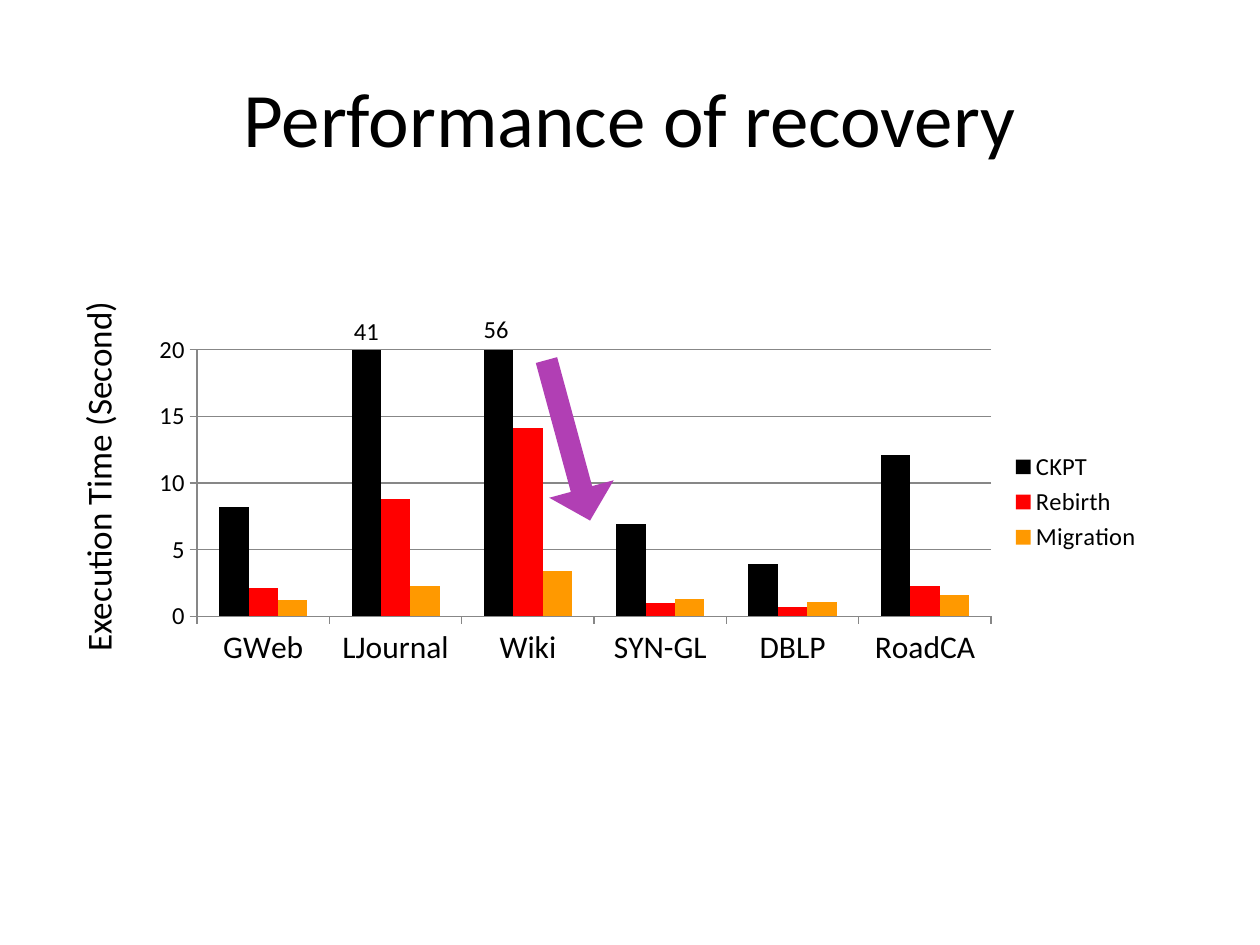
"""Build the slide that compares recovery times in a column chart."""
from dataclasses import dataclass

from lxml import etree
from pptx import Presentation
from pptx.chart import data
from pptx.dml.color import RGBColor
from pptx.enum import chart as kinds, shapes, text
from pptx.oxml import ns
from pptx.util import Inches, Pt


@dataclass(frozen=True)
class Theme:
    font: str = "Calibri"
    ink: str = "000000"
    grid: str = "878787"
    arrow: str = "B13FB4"
    title: int = 44
    axis: int = 20
    cats: int = 18
    small: int = 14


@dataclass(frozen=True)
class Label:
    words: str
    box: tuple
    size: int
    wrap: bool = True
    turn: bool = False
    mid: bool = False


@dataclass(frozen=True)
class Series:
    name: str
    color: str
    vals: tuple


THEME = Theme()
LABELS = (
    Label("Performance of recovery", (0.5, 0.3, 9, 1.25), THEME.title, mid=True),
    Label("41", (2.71, 2.46, 0.58, 0.34), THEME.small),
    Label("Execution Time (Second)", (0.56, 2.28, 0.54, 2.99), THEME.axis,
          wrap=False, turn=True),
    Label("56", (3.74, 2.44, 0.58, 0.34), THEME.small),
)
CATS = ("GWeb", "LJournal", "Wiki", "SYN-GL", "DBLP", "RoadCA")
SERIES = (
    Series("CKPT", "000000", (8.2, 41, 55.7, 6.9, 3.9, 12.1)),
    Series("Rebirth", "FF0000", (2.1, 8.8, 14.1, 1, 0.7, 2.3)),
    Series("Migration", "FF9900", (1.2, 2.3, 3.4, 1.3, 1.1, 1.6)),
)
PLOT = {"x": 0.06, "y": 0.06, "w": 0.78, "h": 0.77}


def place(box: tuple) -> list:
    return [Inches(n) for n in box]


def style(font, size: int) -> None:
    font.name = THEME.font
    font.size = Pt(size)
    font.bold = False
    font.color.rgb = RGBColor.from_string(THEME.ink)


def draw_label(slide, label: Label) -> None:
    frame = slide.shapes.add_textbox(*place(label.box)).text_frame
    frame.word_wrap = label.wrap
    para = frame.paragraphs[0]
    if label.mid:
        frame.vertical_anchor = text.MSO_ANCHOR.MIDDLE
        para.alignment = text.PP_ALIGN.CENTER
    if label.turn:
        frame._txBody.bodyPr.set("vert", "vert270")
    run = para.add_run()
    run.text = label.words
    style(run.font, label.size)


def draw_line(line) -> None:
    line.color.rgb = RGBColor.from_string(THEME.grid)
    line.width = Pt(0.75)


def fix_plot(chart) -> None:
    area = chart._chartSpace.chart.plotArea
    for old in area.findall(ns.qn("c:layout")):
        area.remove(old)
    layout = etree.Element(ns.qn("c:layout"))
    manual = etree.SubElement(layout, ns.qn("c:manualLayout"))
    parts = {"layoutTarget": "inner", "xMode": "edge", "yMode": "edge", **PLOT}
    for tag, val in parts.items():
        etree.SubElement(manual, ns.qn(f"c:{tag}")).set("val", str(val))
    area.insert(0, layout)


def draw_chart(slide) -> None:
    table = data.CategoryChartData()
    table.categories = CATS
    for item in SERIES:
        table.add_series(item.name, item.vals)
    chart = slide.shapes.add_chart(
        kinds.XL_CHART_TYPE.COLUMN_CLUSTERED,
        *place((1.08, 2.61, 8.08, 2.75)), table).chart
    style(chart.font, THEME.small)
    chart.has_title = False
    chart.has_legend = True
    chart.legend.position = kinds.XL_LEGEND_POSITION.RIGHT
    chart.legend.include_in_layout = False
    style(chart.legend.font, THEME.small)
    plot = chart.plots[0]
    plot.gap_width = 150
    plot.overlap = 0
    plot.vary_by_categories = False
    for item, bars in zip(SERIES, plot.series):
        bars.format.fill.solid()
        bars.format.fill.fore_color.rgb = RGBColor.from_string(item.color)
    cat, val = chart.category_axis, chart.value_axis
    for axis, size in ((cat, THEME.cats), (val, THEME.small)):
        axis.major_tick_mark = kinds.XL_TICK_MARK.OUTSIDE
        style(axis.tick_labels.font, size)
        draw_line(axis.format.line)
    val.minimum_scale, val.maximum_scale, val.major_unit = 0, 20, 5
    val.has_major_gridlines = True
    draw_line(val.major_gridlines.format.line)
    fix_plot(chart)


def draw_arrow(slide) -> None:
    arrow = slide.shapes.add_shape(
        shapes.MSO_SHAPE.RIGHT_ARROW, *place((3.85, 3.23, 1.32, 0.53)))
    arrow.rotation = 74.8
    arrow.adjustments[0] = 0.33
    arrow.adjustments[1] = 0.49
    arrow.shadow.inherit = False
    arrow.fill.solid()
    arrow.fill.fore_color.rgb = RGBColor.from_string(THEME.arrow)
    arrow.line.fill.background()


def main() -> None:
    deck = Presentation()
    deck.slide_width, deck.slide_height = Inches(10), Inches(7.5)
    slide = deck.slides.add_slide(deck.slide_layouts[6])
    for label in LABELS:
        draw_label(slide, label)
    draw_chart(slide)
    draw_arrow(slide)
    deck.save("out.pptx")


if __name__ == "__main__":
    main()
